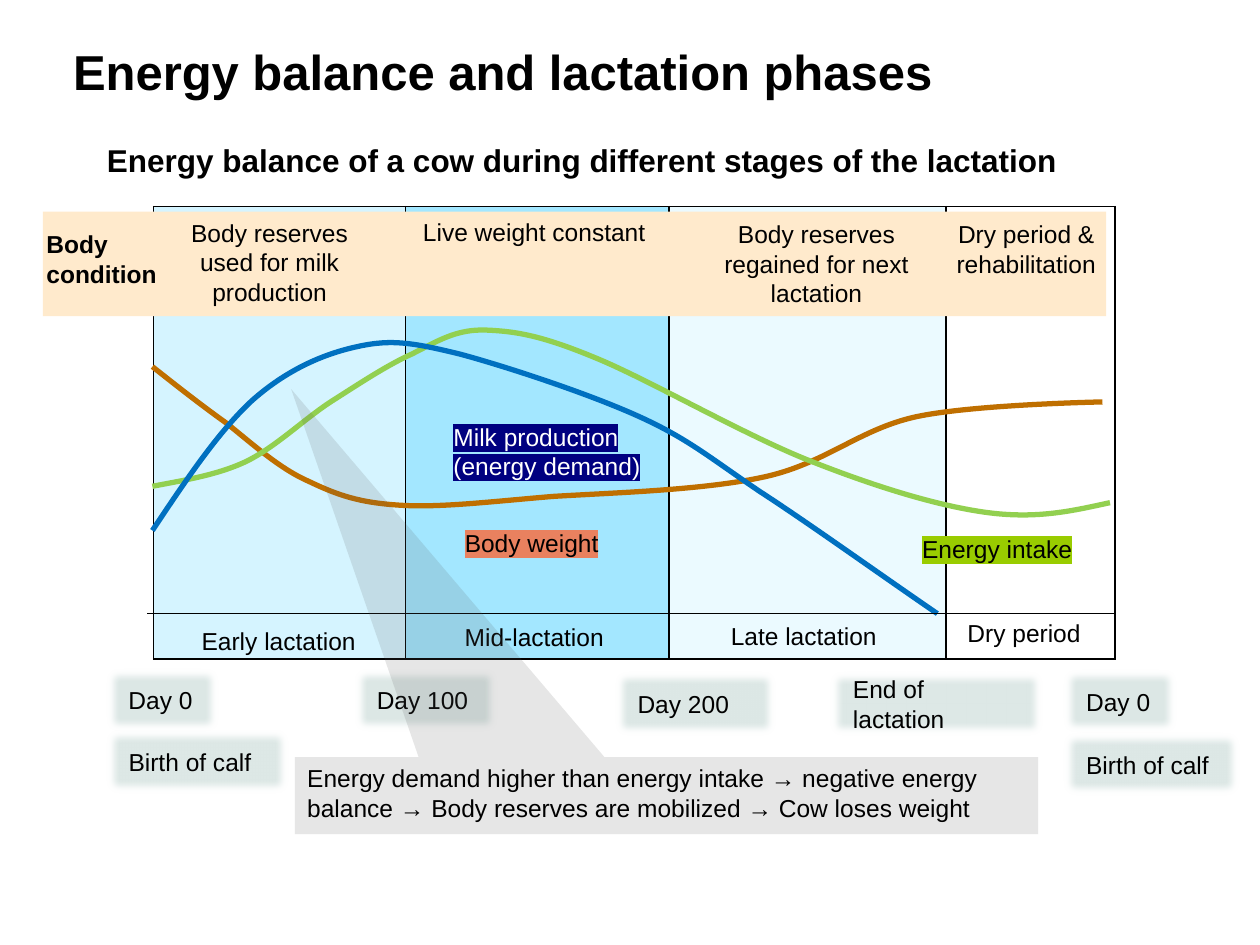
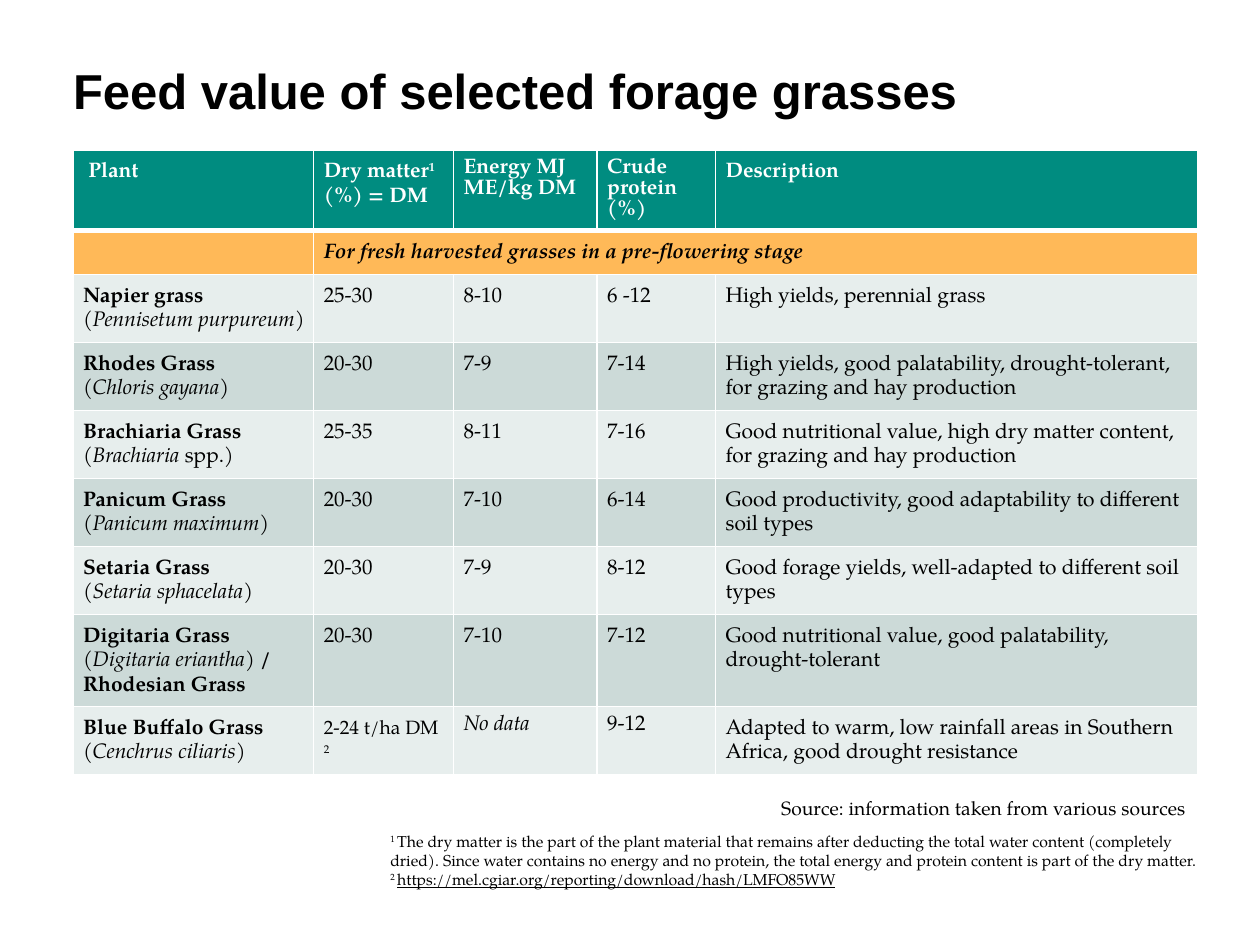
import pptx
import pptx.util
import pptx.dml.color
import pptx.enum.shapes
import pptx.enum.text
from lxml import etree
from pptx.oxml.ns import qn

Inches = pptx.util.Inches
Pt = pptx.util.Pt
KIND = pptx.enum.shapes.MSO_SHAPE
ALIGN = pptx.enum.text.PP_ALIGN
ANCHOR = pptx.enum.text.MSO_ANCHOR

SANS = "Arial"
SERIF = "TeX Gyre Pagella"
BLACK = "000000"
WHITE = "FFFFFF"
TEAL = "008C80"
AMBER = "FFB958"
BANDS = ["E7EEED", "CCDAD8"]
TAG = "DDE8E6"
CREAM = "FFEACC"
GREY = "595959"

PHASES = [(2, "D5F4FF"), (2.09, "A3E7FF"), (2.2, "EBFAFF"), (1.34, WHITE)]
STATES = [
    ("Body reserves used for milk production", (1.33, 1.68, 1.62, 0.81)),
    ("Live weight constant", (3.1, 1.67, 2.28, 0.34)),
    ("Body reserves regained for next lactation", (5.52, 1.69, 1.92, 0.81)),
    ("Dry period & rehabilitation", (7.39, 1.69, 1.51, 0.57)),
]
PADDED = [("Early lactation", 1.4, 4.81), ("Late lactation", 5.6, 4.77)]
STAGES = [
    ("Dry period", (7.58, 4.86, 1.24, 0.34)),
    ("Mid-lactation", (3.59, 4.89, 1.56, 0.34)),
]
DAYS = [
    ("Day 0", 0.82, 5.28, 0.94),
    ("Day 100", 2.79, 5.28, 1.18),
    ("Day 200", 4.86, 5.31, 1.32),
    ("End of lactation", 6.57, 5.31, 1.73),
    ("Day 0", 8.42, 5.29, 0.94),
    ("Birth of calf", 8.42, 5.79, 1.44),
    ("Birth of calf", 0.82, 5.77, 1.49),
]
LABELS = [
    ("Energy intake", (7.22, 4.19, 1.74, 0.34), BLACK, "99CC00"),
    ("Milk production (energy demand)", (3.5, 3.3, 1.72, 0.57), WHITE, "000080"),
    ("Body weight", (3.59, 4.14, 1.32, 0.34), BLACK, "E9815F"),
]
WEIGHT = [
    (1.21, 2.91), (1.4, 3.06), (1.59, 3.21), (1.8, 3.36),
    (2, 3.52), (2.22, 3.72), (2.45, 3.82), (2.68, 3.93), (2.85, 3.99), (3.18, 4.01),
    (3.5, 4.03), (3.91, 3.98), (4.39, 3.94), (4.88, 3.91), (5.61, 3.89), (6.09, 3.78),
    (6.56, 3.67), (6.82, 3.41), (7.26, 3.31), (7.71, 3.21), (8.75, 3.19), (8.75, 3.19),
]
INTAKE = [
    (1.21, 3.86), (1.47, 3.81), (1.73, 3.77), (1.96, 3.66),
    (2.2, 3.54), (2.42, 3.32), (2.64, 3.18), (2.86, 3.04), (3.07, 2.9), (3.27, 2.81),
    (3.47, 2.71), (3.62, 2.61), (3.86, 2.62), (4.11, 2.63), (4.32, 2.67), (4.75, 2.85),
    (5.18, 3.03), (5.94, 3.47), (6.46, 3.67), (6.97, 3.87), (7.46, 4.02), (7.85, 4.07),
    (8.25, 4.12), (8.53, 4.05), (8.81, 3.99),
]
MILK = [
    (1.21, 4.21), (1.47, 3.82), (1.73, 3.43), (2, 3.18),
    (2.27, 2.94), (2.56, 2.81), (2.84, 2.75), (3.11, 2.69), (3.28, 2.72), (3.65, 2.81),
    (4.02, 2.91), (4.66, 3.12), (5.06, 3.3), (5.46, 3.48), (5.63, 3.63), (6.03, 3.9),
    (6.43, 4.16), (6.93, 4.52), (7.44, 4.87),
]
CURVES = [(WEIGHT, "BF6F00"), (INTAKE, "92D050"), (MILK, "0070C0")]

WIDTHS = [1.91, 1.11, 1.14, 0.94, 3.83]
HEIGHTS = [0.64, 0.35] + [0.54] * 5 + [0.73, 0.54]
HEADS = [
    [(" Plant", "b")],
    [("Dry matter", "b"), ("1 ", "bs"), ("(%) = DM", "b")],
    [("Energy MJ ME/kg DM", "b")],
    [("Crude protein (%) ", "b")],
    [("Description", "b")],
]
GRASSES = [
    ("Napier grass ", "Pennisetum purpureum", ")", "25-30", "8-10", "6 -12",
     "High yields, perennial grass"),
    ("Rhodes Grass \n", "Chloris gayana", ")", "20-30", "7-9", "7-14",
     "High yields, good palatability, drought-tolerant, \nfor grazing and hay production"),
    ("Brachiaria Grass ", "Brachiaria", " spp.)", "25-35", "8-11", "7-16",
     "Good nutritional value, high dry matter content, \nfor grazing and hay production"),
    ("Panicum Grass ", "Panicum maximum", ")", "20-30", "7-10", "6-14",
     "Good productivity, good adaptability to different soil types"),
    ("Setaria Grass \n", "Setaria sphacelata", ")", "20-30", "7-9", "8-12",
     "Good forage yields, well-adapted to different soil types"),
    ("Digitaria Grass ", "Digitaria eriantha", ")", "20-30", "7-10", "7-12",
     "Good nutritional value, good palatability, \ndrought-tolerant"),
    ("Blue Buffalo Grass ", "Cenchrus ciliaris", ")", "2-24 t/ha DM ", "No data", "9-12",
     "Adapted to warm, low rainfall areas in Southern Africa, good drought resistance"),
]
NOTE = ("The dry matter is the part of the plant material that remains after deducting "
        "the total water content (completely dried). Since water contains no energy and "
        "no protein, the total energy and protein content is part of the dry matter.")


def color(code):
    return pptx.dml.color.RGBColor.from_string(code)


def paint(fill, code):
    fill.solid()
    fill.fore_color.rgb = color(code)


def tint(host, name, code):
    fill = etree.SubElement(host, qn(name))
    etree.SubElement(fill, qn("a:srgbClr")).set("val", code)
    return fill


def put(para, runs, size, face=SANS, ink=BLACK, mark=None):
    for text, style in runs:
        for row, part in enumerate(text.split("\n")):
            if row:
                para.add_line_break()
            if not part:
                continue
            run = para.add_run()
            run.text = part
            font = run.font
            font.size = Pt(size)
            font.name = face
            font.color.rgb = color(ink)
            font.bold = "b" in style
            font.italic = "i" in style
            font.underline = "u" in style
            props = run._r.get_or_add_rPr()
            if "s" in style:
                props.set("baseline", "30000")
            if mark:
                glow = tint(props, "a:highlight", mark)
                props.find(qn("a:solidFill")).addnext(glow)


def place(box):
    return [Inches(side) for side in box]


def pad(frame, left, top, right, base):
    frame.margin_left, frame.margin_top = Inches(left), Inches(top)
    frame.margin_right, frame.margin_bottom = Inches(right), Inches(base)


def start(deck, text, box):
    slide = deck.slides.add_slide(deck.slide_layouts[5])
    title = slide.shapes.title
    title.left, title.top, title.width, title.height = place(box)
    frame = title.text_frame
    frame.word_wrap = True
    frame.vertical_anchor = ANCHOR.MIDDLE
    pad(frame, 0, 0, 0.1, 0.05)
    para = frame.paragraphs[0]
    para.alignment = ALIGN.LEFT
    put(para, [(text, "b")], 28)
    return slide


def label(slide, box, lines, size=14, align=ALIGN.LEFT, **look):
    frame = slide.shapes.add_textbox(*place(box)).text_frame
    frame.word_wrap = True
    for row, runs in enumerate(lines):
        para = frame.add_paragraph() if row else frame.paragraphs[0]
        para.alignment = align
        put(para, runs, size, **look)
    return frame


def inset(frame):
    frame.vertical_anchor = ANCHOR.MIDDLE
    pad(frame, 0.2, 0.2, 0.2, 0.2)


def block(slide, kind, box, fill, text=""):
    shape = slide.shapes.add_shape(kind, *place(box))
    shape.shadow.inherit = False
    paint(shape.fill, fill)
    shape.line.fill.background()
    frame = shape.text_frame
    frame.word_wrap = True
    frame.vertical_anchor = ANCHOR.TOP
    if text:
        para = frame.paragraphs[0]
        para.alignment = ALIGN.LEFT
        put(para, [(text, "")], 14)
    return shape


def tag(slide, text, left, top, width):
    shape = block(slide, KIND.RECTANGLE, (left, top, width, 0.55), TAG, text)
    inset(shape.text_frame)
    blur = shape._element.spPr.find(qn("a:effectLst"))
    etree.SubElement(blur, qn("a:softEdge")).set("rad", str(Pt(5)))


def curve(slide, knots, ink):
    spots = [tuple(place(knot)) for knot in knots]
    pen = slide.shapes.build_freeform(*spots[0], scale=1.0)
    pen.add_line_segments(spots[1:], close=False)
    shape = pen.convert_to_shape()
    legs = list(shape._element.spPr.iter(qn("a:lnTo")))
    for at in range(0, len(legs), 3):
        arc = etree.Element(qn("a:cubicBezTo"))
        legs[at].addprevious(arc)
        for leg in legs[at:at + 3]:
            arc.append(leg[0])
            leg.getparent().remove(leg)
    shape.shadow.inherit = False
    shape.fill.background()
    shape.line.color.rgb = color(ink)
    shape.line.width = Pt(3)


def axis(slide, x, y, end):
    line = slide.shapes.add_connector(pptx.enum.shapes.MSO_CONNECTOR.STRAIGHT,
                                      *place((x, y, end, y)))
    line.line.color.rgb = color(BLACK)
    line.line.width = Pt(1)
    etree.SubElement(line._element.spPr, qn("a:effectLst"))


def grid(slide, left, top, widths, heights):
    box = (left, top, sum(widths), sum(heights))
    table = slide.shapes.add_table(len(heights), len(widths), *place(box)).table
    table.first_row = table.horz_banding = False
    for col, width in zip(table.columns, widths):
        col.width = Inches(width)
    for row, height in zip(table.rows, heights):
        row.height = Inches(height)
    return table


def cell(spot, fill, edge, runs=(), tight=False, base=1, size=12, ink=BLACK):
    props = spot._tc.get_or_add_tcPr()
    for side in "LRTB":
        line = etree.SubElement(props, qn("a:ln" + side))
        line.set("w", str(Pt(base if side == "B" else 1)))
        tint(line, "a:solidFill", edge)
    paint(spot.fill, fill)
    gap = 0.07 if runs else 0
    pad(spot, 0.08, gap, 0.07, gap)
    para = spot.text_frame.paragraphs[0]
    if runs and not tight:
        para.line_spacing = Pt(14)
        para.space_after = Pt(6)
    put(para, runs, size, SERIF, ink)


def energy(deck):
    slide = start(deck, "Energy balance and lactation phases", (0.58, 0.21, 9.02, 0.76))
    table = grid(slide, 1.22, 1.64, [width for width, fill in PHASES], [3.59])
    for col, (width, fill) in enumerate(PHASES):
        cell(table.cell(0, col), fill, BLACK)
    block(slide, KIND.RECTANGLE, (0.34, 1.68, 8.44, 0.83), CREAM)
    for text, left, top in PADDED:
        inset(label(slide, (left, top, 1.69, 0.55), [[(text, "")]]))
    for day in DAYS:
        tag(slide, *day)
    label(slide, (0.75, 1.07, 8.35, 0.4),
          [[("Energy balance of a cow during different stages of the lactation", "b")]], 18)
    for text, box in STATES:
        label(slide, box, [[(text, "")]], align=ALIGN.CENTER)
    for text, box, ink, mark in LABELS:
        label(slide, box, [[(text, "")]], ink=ink, mark=mark)
    for text, box in STAGES:
        label(slide, box, [[(text, "")]])
    for knots, ink in CURVES:
        curve(slide, knots, ink)
    label(slide, (0.27, 1.77, 1.3, 0.57), [[("Body condition", "b")]])
    axis(slide, 1.17, 4.87, 8.86)
    call = block(slide, KIND.RECTANGULAR_CALLOUT, (2.34, 6.01, 5.9, 0.61), GREY,
                 "Energy demand higher than energy intake → negative energy balance → "
                 "Body reserves are mobilized → Cow loses weight")
    call.adjustments[0], call.adjustments[1] = -0.505, -5.292
    shade = call._element.spPr.find(qn("a:solidFill"))[0]
    etree.SubElement(shade, qn("a:alpha")).set("val", "15000")


def feed(deck):
    slide = start(deck, "Feed value of selected forage grasses", (0.58, 0.44, 9.02, 0.59))
    table = grid(slide, 0.58, 1.19, WIDTHS, HEIGHTS)
    for col, runs in enumerate(HEADS):
        cell(table.cell(0, col), TEAL, WHITE, runs, col in (2, 3), base=3, ink=WHITE)
    table.cell(1, 1).merge(table.cell(1, 4))
    stage = [("For fresh harvested grasses in a pre-flowering stage", "bi")]
    for col in range(len(WIDTHS)):
        cell(table.cell(1, col), AMBER, WHITE, stage if col == 1 else ())
    for row, (name, latin, tail, *facts) in enumerate(GRASSES):
        plant = [(name, "b"), ("(", ""), (latin, "i"), (tail, "")]
        if latin == "Digitaria eriantha":
            plant.append((" / Rhodesian Grass", "b"))
        fill = BANDS[row % 2]
        cell(table.cell(row + 2, 0), fill, WHITE, plant)
        last = row == len(GRASSES) - 1
        for col, fact in enumerate(facts, 1):
            runs = [(fact, "i" if fact == "No data" else "")]
            yields = "t/ha" in fact
            if yields:
                runs.append(("2", "s"))
            cell(table.cell(row + 2, col), fill, WHITE, runs, last and col in (2, 3),
                 size=11 if yields else 12)
    label(slide, (1.22, 6.27, 8.29, 0.29),
          [[("Source: information taken from various sources", "")]],
          11, ALIGN.RIGHT, face=SERIF)
    link = "https://mel.cgiar.org/reporting/download/hash/LMFO85WW"
    label(slide, (3, 6.55, 6.61, 0.69),
          [[("1 ", "s"), (NOTE, "")], [("2 ", "s"), (link, "u")]], 9, face=SERIF)


def main():
    deck = pptx.Presentation()
    deck.slide_width, deck.slide_height = Inches(10), Inches(7.5)
    energy(deck)
    feed(deck)
    deck.save("out.pptx")


if __name__ == "__main__":
    main()
